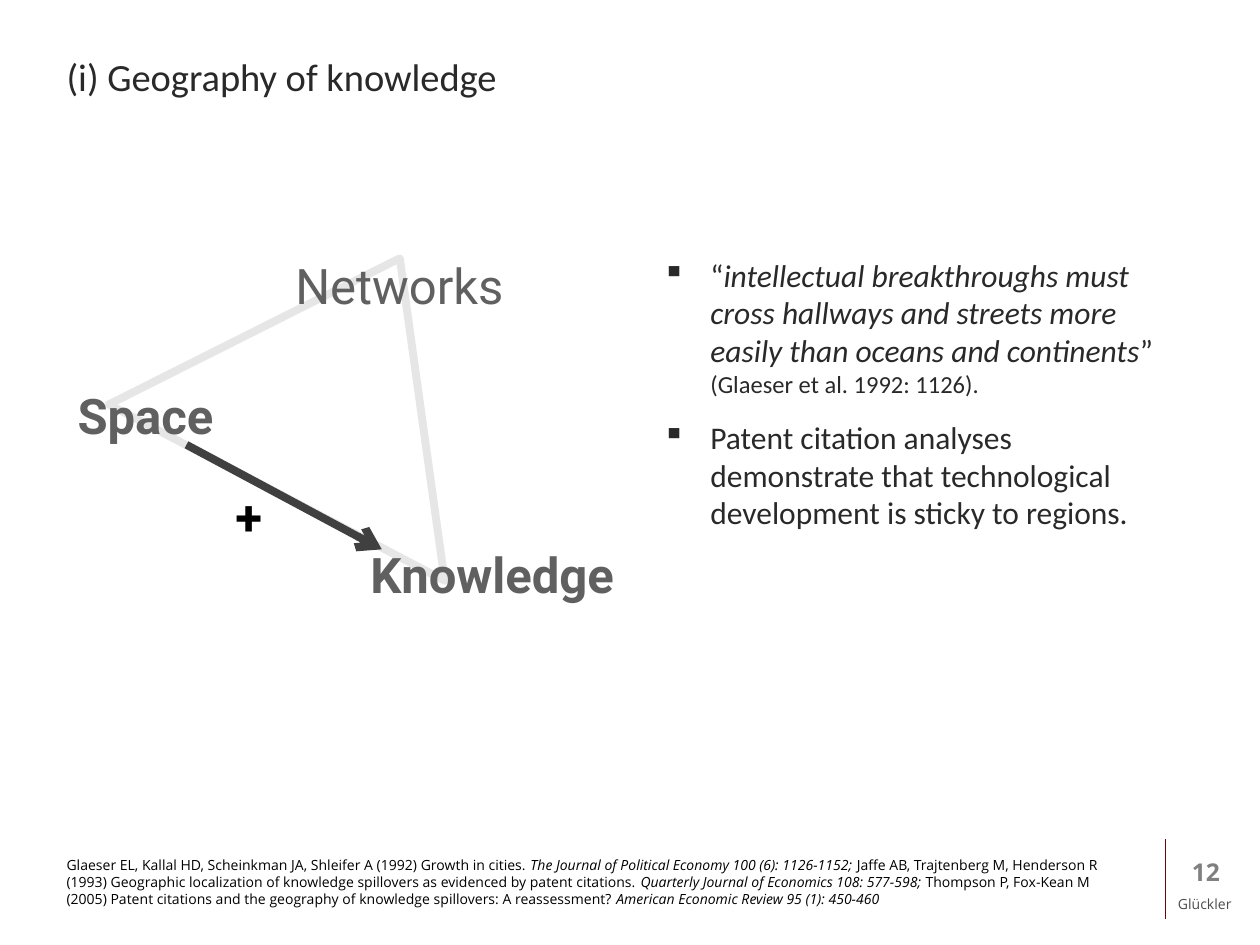
import pptx
import pptx.util
import pptx.dml.color
import pptx.enum.shapes
import pptx.enum.text
import pptx.oxml.xmlchemy
import lxml.etree

RGBColor = pptx.dml.color.RGBColor
Pt = pptx.util.Pt
ALIGN = pptx.enum.text.PP_ALIGN
ANCHOR = pptx.enum.text.MSO_ANCHOR
CONNECTOR = pptx.enum.shapes.MSO_CONNECTOR
NS = "http://schemas.openxmlformats.org/drawingml/2006/main"

WHITE = RGBColor(0xFF, 0xFF, 0xFF)
BLACK = RGBColor(0x00, 0x00, 0x00)
INK = RGBColor(0x29, 0x29, 0x29)
ARROW_GRAY = RGBColor(0x40, 0x40, 0x40)
NAME_GRAY = RGBColor(0x4D, 0x4D, 0x4D)
CORNER_GRAY = RGBColor(0x60, 0x60, 0x60)
NUMBER_GRAY = RGBColor(0x80, 0x80, 0x80)
PALE_GRAY = RGBColor(0xE6, 0xE6, 0xE6)
MAROON = RGBColor(0x65, 0x09, 0x07)

deck = pptx.Presentation()
deck.slide_width = pptx.util.Inches(10)
deck.slide_height = pptx.util.Inches(7.5)
page = deck.slides.add_slide(deck.slide_layouts[6])

# Grid of 100 columns and 75 rows
COL = deck.slide_width / 100
ROW = deck.slide_height / 75


def add_text(left, top, width, height, paragraphs, font, color,
             align=ALIGN.LEFT, wrap=True):
    """Each paragraph is a list of (text, size, bold, italic) runs."""
    box = page.shapes.add_textbox(int(left * COL), int(top * ROW),
                                  int(width * COL), int(height * ROW))
    box.text_frame.word_wrap = wrap
    for index, spans in enumerate(paragraphs):
        para = box.text_frame.paragraphs[0] if index == 0 else box.text_frame.add_paragraph()
        para.alignment = align
        for text, size, bold, italic in spans:
            span = para.add_run()
            span.text = text
            span.font.name = font
            span.font.size = Pt(size)
            span.font.bold = bold
            span.font.italic = italic
            span.font.color.rgb = color
    return box


def add_line(left, top, right, bottom, color, width):
    line = page.shapes.add_connector(CONNECTOR.STRAIGHT, int(left * COL), int(top * ROW),
                                     int(right * COL), int(bottom * ROW))
    line.line.color.rgb = color
    line.line.width = Pt(width)
    lxml.etree.SubElement(line.element.spPr, f"{{{NS}}}effectLst")
    return line


# Footer rule and author
add_line(92.5, 66.6, 92.5, 72.9, MAROON, 1)
add_text(92.5, 70.6, 6.5, 2.4, [[("Glückler", 8, False, False)]],
         "Open Sans", NAME_GRAY, wrap=False)

# Title
title = add_text(4.3, 1.3, 73.2, 9.5, [[("(i) Geography of knowledge", 22, False, False)]],
                 "Calibri", INK)
title.fill.solid()
title.fill.fore_color.rgb = WHITE
title.text_frame.vertical_anchor = ANCHOR.MIDDLE

# Bulleted findings
findings = add_text(51.6, 19.8, 41.7, 44.5, [
    [("“", 18, False, False),
     ("intellectual breakthroughs must cross hallways and streets more easily "
      "than oceans and continents", 18, False, True),
     ("” ", 18, False, False),
     ("(Glaeser et al. 1992: 1126).", 14, False, False)],
    [("Patent citation analyses demonstrate that technological development "
      "is sticky to regions.", 18, False, False)],
], "Calibri", INK)
for index, para in enumerate(findings.text_frame.paragraphs):
    if index:
        para.space_before = Pt(7)
    para.space_after = Pt(4)
    properties = para._p.get_or_add_pPr()
    properties.set("marL", str(int(3.8 * COL)))
    properties.set("indent", str(int(-3.8 * COL)))
    lxml.etree.SubElement(properties, f"{{{NS}}}buChar", char="▪")

# Page number
add_text(91.7, 67.5, 6.1, 3.3, [[("12", 14, True, False)]],
         "Open Sans", NUMBER_GRAY, ALIGN.RIGHT)

# References, with journal details in italics
references = [
    ("Glaeser EL, Kallal HD, Scheinkman JA, Shleifer A (1992) Growth in cities. ",
     "The Journal of Political Economy 100 (6): 1126-1152; "),
    ("Jaffe AB, Trajtenberg M, Henderson R (1993) Geographic localization of "
     "knowledge spillovers as evidenced by patent citations. ",
     "Quarterly Journal of Economics 108: 577-598; "),
    ("Thompson P, Fox-Kean M (2005) Patent citations and the geography of "
     "knowledge spillovers: A reassessment? ",
     "American Economic Review 95 (1): 450-460"),
]
add_text(4.3, 67.5, 86.6, 5,
         [[(text, 8, False, italic) for work in references
           for text, italic in zip(work, (False, True))]],
         "Open Sans", BLACK)

# Triangle
triangle = page.shapes.add_shape(pptx.enum.shapes.MSO_SHAPE.ISOSCELES_TRIANGLE,
                                 int(11.8 * COL), int(19.3 * ROW),
                                 int(30.1 * COL), int(21 * ROW))
triangle.rotation = 27.7
triangle.shadow.inherit = False
triangle.fill.background()
triangle.line.color.rgb = PALE_GRAY
triangle.line.width = Pt(4.5)

# Corner labels
for name, left, top, width, bold in [
    ("Knowledge", 24.2, 42.7, 29.7, True),
    ("Space", 1.9, 30.1, 19.3, True),
    ("Networks", 17.9, 19.8, 27.6, False),
]:
    add_text(left, top, width, 5.8, [[(name, 28, bold, False)]],
             "Roboto", CORNER_GRAY, ALIGN.CENTER)

# Positive effect of space on knowledge
add_text(17.7, 38.1, 4.3, 5.7, [[("+", 28, True, False)]], "Roboto", BLACK, wrap=False)
arrow = add_line(14.8, 35.3, 30.3, 43.6, ARROW_GRAY, 4.5)
lxml.etree.SubElement(arrow.line._get_or_add_ln(), f"{{{NS}}}tailEnd", type="arrow")

deck.save("out.pptx")
